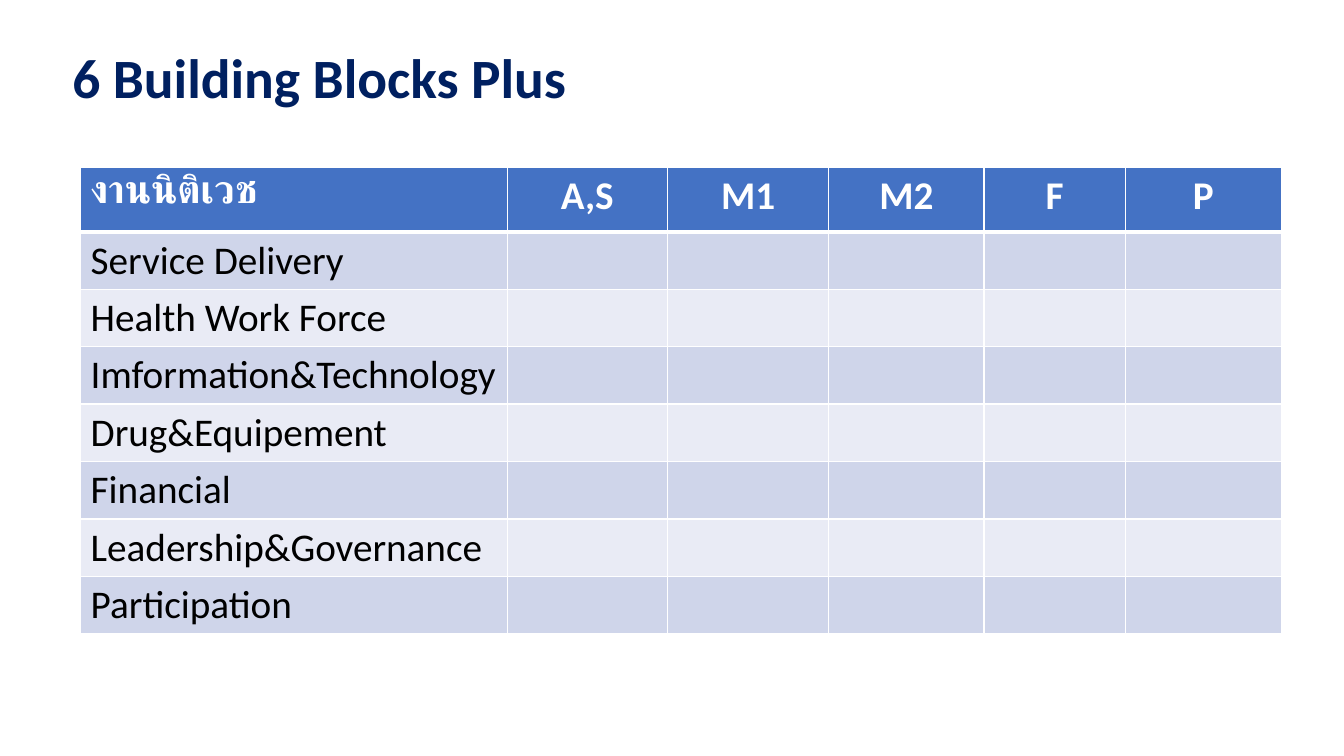
"""Build the slide "6 Building Blocks Plus" with its table of blocks."""
from dataclasses import dataclass

from lxml import etree
from pptx import Presentation
from pptx.dml.color import RGBColor
from pptx.enum.text import MSO_ANCHOR, PP_ALIGN
from pptx.oxml.ns import qn
from pptx.util import Inches, Pt

MIDDLE = MSO_ANCHOR.MIDDLE
LEFT, CENTER = PP_ALIGN.LEFT, PP_ALIGN.CENTER


@dataclass(frozen=True)
class Theme:
    font: str = "Calibri"
    title: str = "002060"
    head: str = "4472C4"
    bands: tuple = ("E9EBF5", "CFD5EA")
    light: str = "FFFFFF"
    dark: str = "000000"
    title_size: float = 39.6
    cell_size: float = 28


theme = Theme()


def style(par, size, color, bold):
    for run in par.runs:
        run.font.name = theme.font
        run.font.size = Pt(size)
        run.font.bold = bold
        run.font.color.rgb = RGBColor.from_string(color)


def border(cell, side, width):
    props = cell._tc.get_or_add_tcPr()
    line = etree.SubElement(props, qn(f"a:ln{side}"), w=str(Pt(width)))
    fill = etree.SubElement(line, qn("a:solidFill"))
    etree.SubElement(fill, qn("a:srgbClr"), val=theme.light)


deck = Presentation()
deck.slide_width, deck.slide_height = Inches(13.33), Inches(7.5)
slide = deck.slides.add_slide(deck.slide_layouts[6])

title = slide.shapes.add_textbox(Inches(0.62), Inches(0.46), Inches(11.5), Inches(0.67))
frame = title.text_frame
frame.word_wrap = True
frame.vertical_anchor = MIDDLE
frame.text = "6 Building Blocks Plus"
frame.paragraphs[0].line_spacing = 0.9
style(frame.paragraphs[0], theme.title_size, theme.title, True)

heads = ["งานนิติเวช", "A,S", "M1", "M2", "F", "P"]
blocks = [
    "Service Delivery",
    "Health Work Force",
    "Imformation&Technology",
    "Drug&Equipement",
    "Financial",
    "Leadership&Governance",
    "Participation",
]
rows = [heads] + [[block] + [""] * (len(heads) - 1) for block in blocks]
widths = [4.23, 1.59, 1.6, 1.54, 1.4, 1.55]
heights = [0.64] + [0.57] * len(blocks)

table = slide.shapes.add_table(
    len(rows), len(heads), Inches(0.8), Inches(1.66),
    Inches(sum(widths)), Inches(sum(heights)),
).table
for col, width in zip(table.columns, widths):
    col.width = Inches(width)

for r, (words, height) in enumerate(zip(rows, heights)):
    table.rows[r].height = Inches(height)
    top = r == 0
    for c, word in enumerate(words):
        cell = table.cell(r, c)
        for side in "LRTB":
            thick = (top and side == "B") or (r == 1 and side == "T")
            border(cell, side, 3 if thick else 1)
        cell.fill.solid()
        cell.fill.fore_color.rgb = RGBColor.from_string(theme.head if top else theme.bands[r % 2])
        cell.text_frame.text = word
        par = cell.text_frame.paragraphs[0]
        par.alignment = CENTER if top and c else LEFT
        style(par, theme.cell_size, theme.light if top else theme.dark, top)

deck.save("out.pptx")
